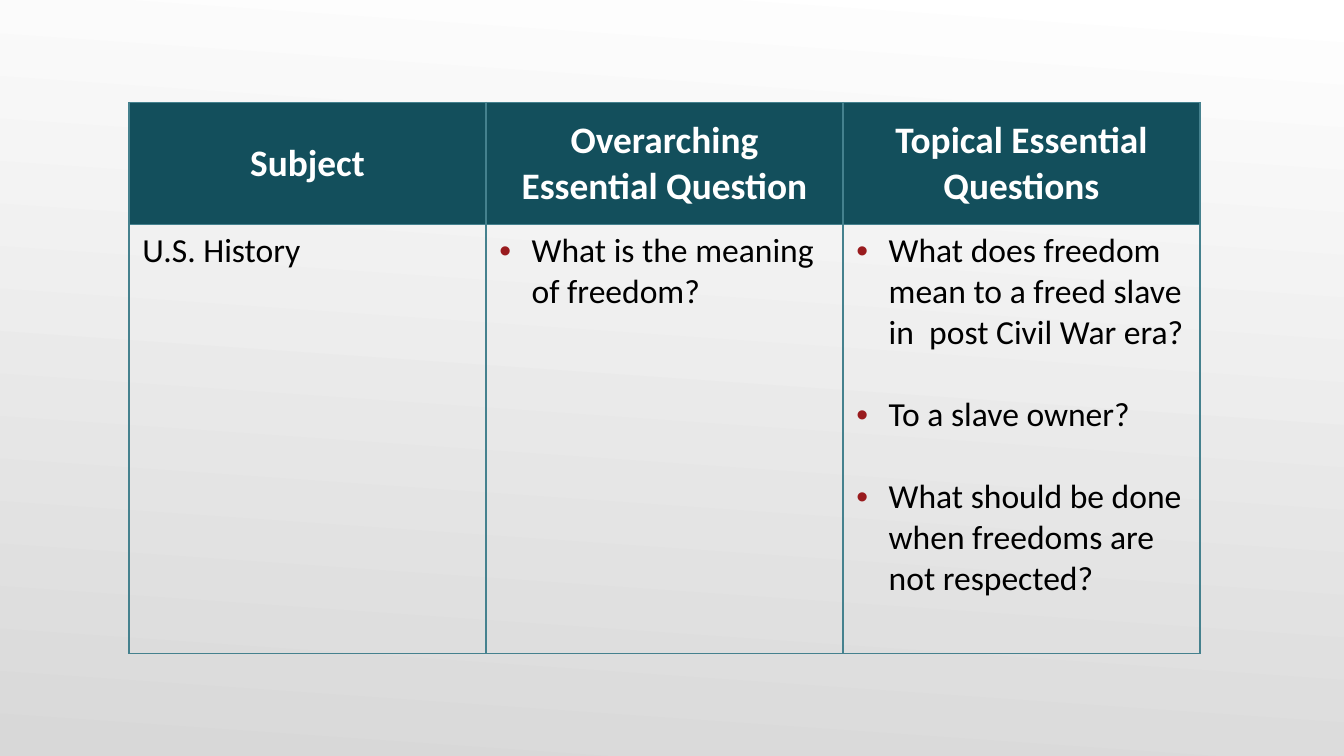
from dataclasses import dataclass

from lxml import etree
from pptx import Presentation
from pptx import util as u
from pptx.dml.color import RGBColor
from pptx.enum import text
from pptx.oxml.ns import qn


@dataclass(frozen=True)
class Theme:
    font: str = "Calibri"
    head_size: float = 20
    body_size: float = 18
    item_gap: float = 22
    border_width: float = 0.75
    white: str = "FFFFFF"
    black: str = "000000"
    mist: str = "D8D8D8"
    teal: str = "134F5C"
    border: str = "45818E"
    bullet: str = "991B1E"


THEME = Theme()
HEADINGS = ["Subject", "Overarching Essential Question", "Topical Essential Questions"]
SUBJECT = ["U.S. History"]
OVERARCHING = ["What is the meaning of freedom?"]
TOPICAL = [
    "What does freedom mean to a freed slave in  post Civil War era?",
    "To a slave owner?",
    "What should be done when freedoms are not respected?",
]


def percent(length, share):
    return round(length * share / 100)


def add_color(parent, color):
    etree.SubElement(parent, qn("a:srgbClr"), val=color)


def add_bullet(paragraph):
    properties = paragraph._p.get_or_add_pPr()
    properties.set("marL", str(u.Inches(0.24)))
    properties.set("indent", str(u.Inches(-0.26)))
    add_color(etree.SubElement(properties, qn("a:buClr")), THEME.bullet)
    etree.SubElement(properties, qn("a:buFont"), typeface="Arial")
    etree.SubElement(properties, qn("a:buChar"), char="•")


def write(frame, lines, size=THEME.body_size, color=THEME.black, bold=False,
          align=text.PP_ALIGN.LEFT, bulleted=False, gap=0):
    for index, line in enumerate(lines):
        paragraph = frame.add_paragraph() if index else frame.paragraphs[0]
        if bulleted:
            add_bullet(paragraph)
        paragraph.alignment = align
        if index:
            paragraph.space_before = u.Pt(gap)
        run = paragraph.add_run()
        run.text = line
        run.font.name = THEME.font
        run.font.size = u.Pt(size)
        run.font.bold = bold
        run.font.color.rgb = RGBColor.from_string(color)


def outline(cell):
    properties = cell._tc.get_or_add_tcPr()
    for side in ("lnL", "lnR", "lnT", "lnB"):
        edge = etree.SubElement(properties, qn(f"a:{side}"), w=str(u.Pt(THEME.border_width)))
        add_color(etree.SubElement(edge, qn("a:solidFill")), THEME.border)


def format_cell(cell, anchor, fill=None):
    cell.margin_left = cell.margin_right = u.Inches(0.1)
    cell.margin_top = cell.margin_bottom = u.Inches(0.04)
    cell.vertical_anchor = anchor
    outline(cell)
    if fill:
        cell.fill.solid()
        cell.fill.fore_color.rgb = RGBColor.from_string(fill)
    else:
        cell.fill.background()


def paint_background(slide):
    fill = slide.background.fill
    fill.gradient()
    fill.gradient_angle = 266
    for stop, position, color in zip(fill.gradient_stops, (0, 1), (THEME.white, THEME.mist)):
        stop.position = position
        stop.color.rgb = RGBColor.from_string(color)


def add_question_table(slide, left, top, width, height):
    questions = slide.shapes.add_table(2, len(HEADINGS), left, top, width, height).table
    questions.first_row = questions.horz_banding = False
    for column in questions.columns:
        column.width = width // len(HEADINGS)
    head_height = percent(height, 22.2)
    questions.rows[0].height = head_height
    questions.rows[1].height = height - head_height

    for column, (heading, entries) in enumerate(zip(HEADINGS, (SUBJECT, OVERARCHING, TOPICAL))):
        head, body = questions.cell(0, column), questions.cell(1, column)
        format_cell(head, text.MSO_ANCHOR.MIDDLE, THEME.teal)
        write(head.text_frame, [heading], size=THEME.head_size, color=THEME.white,
              bold=True, align=text.PP_ALIGN.CENTER)
        format_cell(body, text.MSO_ANCHOR.TOP)
        write(body.text_frame, entries, bulleted=column > 0, gap=THEME.item_gap)


def main():
    deck = Presentation()
    deck.slide_width = u.Inches(10)
    deck.slide_height = deck.slide_width * 9 // 16
    wide, high = deck.slide_width, deck.slide_height
    slide = deck.slides.add_slide(deck.slide_layouts[6])
    paint_background(slide)
    add_question_table(slide, percent(wide, 9.6), percent(high, 13.55),
                       percent(wide, 79.7), percent(high, 72.9))
    deck.save("out.pptx")


if __name__ == "__main__":
    main()
